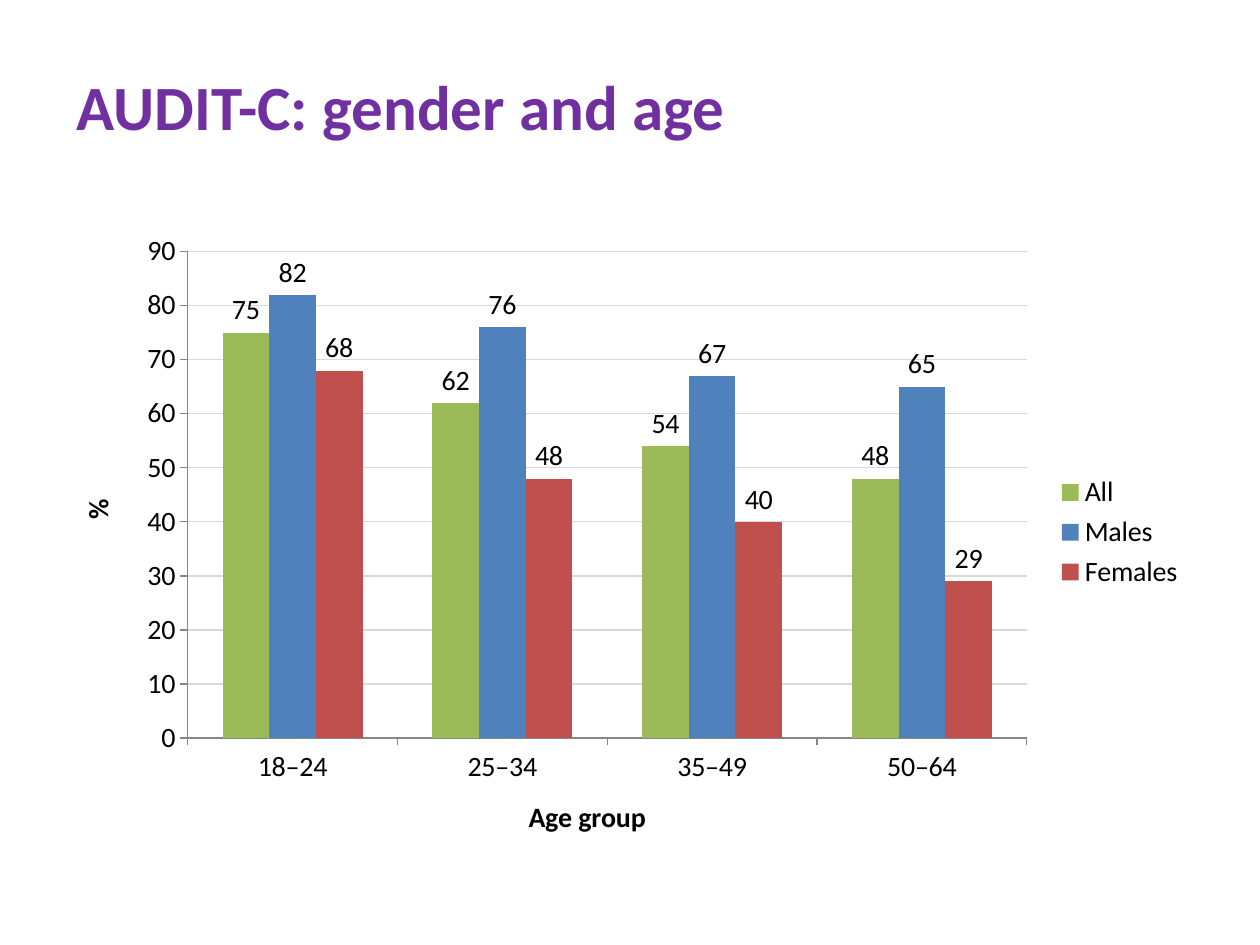
from lxml import etree
from pptx import Presentation
from pptx.chart.data import CategoryChartData
from pptx.dml.color import RGBColor
from pptx.enum.chart import XL_CHART_TYPE, XL_LABEL_POSITION, XL_LEGEND_POSITION, XL_TICK_MARK
from pptx.enum.text import MSO_ANCHOR, PP_ALIGN
from pptx.oxml.ns import qn
from pptx.util import Inches, Pt

COLUMNS = XL_CHART_TYPE.COLUMN_CLUSTERED
OUTSIDE_END = XL_LABEL_POSITION.OUTSIDE_END
LEGEND_RIGHT = XL_LEGEND_POSITION.RIGHT
TICK_OUTSIDE = XL_TICK_MARK.OUTSIDE
TICK_NONE = XL_TICK_MARK.NONE
MIDDLE = MSO_ANCHOR.MIDDLE
LEFT = PP_ALIGN.LEFT

PURPLE = RGBColor(0x70, 0x30, 0xA0)
BLACK = RGBColor(0x00, 0x00, 0x00)
GRID_GREY = RGBColor(0xD9, 0xD9, 0xD9)
AXIS_GREY = RGBColor(0x86, 0x86, 0x86)
GREEN = RGBColor(0x9B, 0xBB, 0x59)
BLUE = RGBColor(0x4F, 0x81, 0xBD)
RED = RGBColor(0xC0, 0x50, 0x4D)

AGE_GROUPS = ["18–24", "25–34", "35–49", "50–64"]
SERIES = [
    ("All", GREEN, [75, 62, 54, 48]),
    ("Males", BLUE, [82, 76, 67, 65]),
    ("Females", RED, [68, 48, 40, 29]),
]
PLOT_AREA = {"x": 0.11, "y": 0.05, "w": 0.74, "h": 0.78}


class SlideBuilder:
    font_name = "Calibri"

    def __init__(self, page):
        self.page = page

    def format_font(self, font, color, **values):
        for name, value in {"name": self.font_name, **values}.items():
            setattr(font, name, value)
        font.color.rgb = color

    def title(self, text, left, top, width, height):
        box = self.page.shapes.title
        place = {"left": left, "top": top, "width": width, "height": height}
        for name, value in place.items():
            setattr(box, name, Inches(value))
        frame = box.text_frame
        frame.text = text
        frame.word_wrap = True
        frame.vertical_anchor = MIDDLE
        para = frame.paragraphs[0]
        para.alignment = LEFT
        self.format_font(para.runs[0].font, PURPLE, size=Pt(36), bold=True)

    def axis(self, axis, title):
        axis.major_tick_mark = TICK_OUTSIDE
        axis.minor_tick_mark = TICK_NONE
        axis.format.line.color.rgb = AXIS_GREY
        axis.format.line.width = Pt(0.75)
        frame = axis.axis_title.text_frame
        frame.text = title
        span = frame.paragraphs[0].runs[0]
        self.format_font(span.font, BLACK, size=Pt(16), bold=True)

    def plot_layout(self, chart):
        plot_area = chart._chartSpace.chart.plotArea
        for old in plot_area.findall(qn("c:layout")):
            plot_area.remove(old)
        layout = etree.Element(qn("c:layout"))
        manual = etree.SubElement(layout, qn("c:manualLayout"))
        settings = {"layoutTarget": "inner", "xMode": "edge", "yMode": "edge", **PLOT_AREA}
        for name, value in settings.items():
            etree.SubElement(manual, qn(f"c:{name}")).set("val", str(value))
        plot_area.insert(0, layout)

    def column_chart(self, left, top, width, height):
        data = CategoryChartData(number_format="0")
        data.categories = AGE_GROUPS
        for name, _, values in SERIES:
            data.add_series(name, values)
        place = [Inches(value) for value in (left, top, width, height)]
        chart = self.page.shapes.add_chart(COLUMNS, *place, data).chart
        self.format_font(chart.font, BLACK, size=Pt(16))
        chart.has_title = False
        chart.has_legend = True
        chart.legend.position = LEGEND_RIGHT
        chart.legend.include_in_layout = False

        self.axis(chart.category_axis, "Age group")
        value_axis = chart.value_axis
        self.axis(value_axis, "%")
        for name, value in {"minimum_scale": 0, "maximum_scale": 90, "major_unit": 10}.items():
            setattr(value_axis, name, value)
        value_axis.tick_labels.number_format = "0"
        value_axis.tick_labels.number_format_is_linked = False
        grid = value_axis.major_gridlines.format.line
        grid.color.rgb = GRID_GREY
        grid.width = Pt(0.75)

        plot = chart.plots[0]
        for name, value in {"gap_width": 150, "overlap": 0, "vary_by_categories": False}.items():
            setattr(plot, name, value)
        label_format = {
            "show_value": True,
            "position": OUTSIDE_END,
            "number_format": "#,##0",
            "number_format_is_linked": False,
        }
        for series, (_, color, _) in zip(plot.series, SERIES):
            series.format.fill.solid()
            series.format.fill.fore_color.rgb = color
            series.invert_if_negative = False
            for name, value in label_format.items():
                setattr(series.data_labels, name, value)
        self.plot_layout(chart)


def main():
    deck = Presentation()
    deck.slide_width = Inches(10)
    deck.slide_height = Inches(7.5)
    builder = SlideBuilder(deck.slides.add_slide(deck.slide_layouts[5]))
    builder.title("AUDIT-C: gender and age", 0.51, 0.44, 9.22, 0.79)
    builder.column_chart(0.5, 1.75, 9, 4.95)
    deck.save("out.pptx")


if __name__ == "__main__":
    main()
